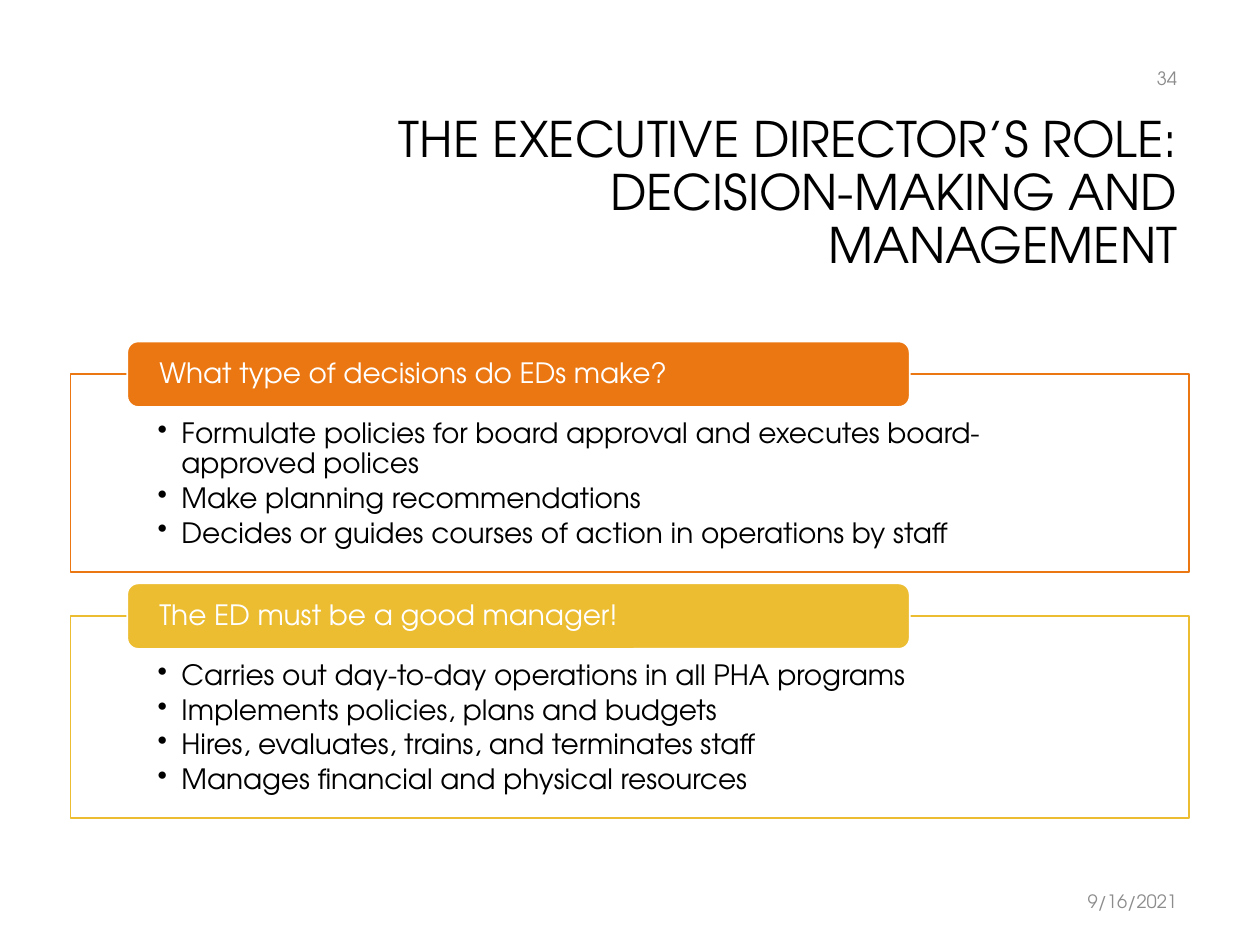
from lxml import etree
from pptx import Presentation
from pptx.dml.color import RGBColor
from pptx.enum import shapes, text
from pptx.oxml.ns import qn
from pptx.util import Inches, Pt

FONT = "TeX Gyre Adventor"
WHITE, BLACK, GRAY = "FFFFFF", "000000", "8C8C8C"


def color(value):
    return RGBColor.from_string(value)


def add_run(paragraph, words, size, ink):
    run = paragraph.add_run()
    run.text = words
    run.font.name = FONT
    run.font.size = Pt(size)
    run.font.color.rgb = color(ink)


prs = Presentation()
prs.slide_width, prs.slide_height = Inches(10), Inches(7.5)
slide = prs.slides.add_slide(prs.slide_layouts[6])

# Title, page number and date: right-aligned text
headings = [
    (["THE EXECUTIVE DIRECTOR’S ROLE:", "DECISION-MAKING AND MANAGEMENT"],
     2.38, 0.84, 7.06, 1.41, 28, BLACK, 0.9),
    (["34"], 7.19, 0.42, 2.25, 0.4, 10.5, GRAY, 1.0),
    (["9/16/2021"], 7.05, 6.95, 2.39, 0.4, 10.5, GRAY, 1.0),
]
for lines, left, top, width, height, size, ink, spacing in headings:
    heading = slide.shapes.add_textbox(
        Inches(left), Inches(top), Inches(width), Inches(height)).text_frame
    heading.word_wrap = True
    heading.vertical_anchor = text.MSO_ANCHOR.MIDDLE
    paragraph = heading.paragraphs[0]
    paragraph.alignment = text.PP_ALIGN.RIGHT
    paragraph.line_spacing = spacing
    for i, line in enumerate(lines):
        if i:
            paragraph.add_line_break()
        add_run(paragraph, line, size, ink)

# Two topics: an outlined panel of bullets under a filled label
topics = [
    ("What type of decisions do EDs make?", "EB7712", 2.97, 1.57, [
        "Formulate policies for board approval and executes board-approved polices",
        "Make planning recommendations",
        "Decides or guides courses of action in operations by staff",
    ]),
    ("The ED must be a good manager!", "ECBD31", 4.89, 1.6, [
        "Carries out day-to-day operations in all PHA programs",
        "Implements policies, plans and budgets",
        "Hires, evaluates, trains, and terminates staff",
        "Manages financial and physical resources",
    ]),
]
for question, accent, top, height, points in topics:
    panel = slide.shapes.add_shape(
        shapes.MSO_SHAPE.RECTANGLE,
        Inches(0.56), Inches(top), Inches(8.88), Inches(height))
    label = slide.shapes.add_shape(
        shapes.MSO_SHAPE.ROUNDED_RECTANGLE,
        Inches(1.01), Inches(top - 0.26), Inches(6.21), Inches(0.52))
    for part, fill, line, side, above, below, anchor in (
            (panel, WHITE, accent, 0.69, 0.36, 0.12, text.MSO_ANCHOR.TOP),
            (label, accent, WHITE, 0.23, 0, 0, text.MSO_ANCHOR.MIDDLE)):
        part.shadow.inherit = False
        part.fill.solid()
        part.fill.fore_color.rgb = color(fill)
        part.line.color.rgb = color(line)
        part.line.width = Pt(1)
        frame = part.text_frame
        frame.word_wrap = True
        frame.vertical_anchor = anchor
        frame.margin_left = frame.margin_right = Inches(side)
        frame.margin_top, frame.margin_bottom = Inches(above), Inches(below)

    # Label text
    paragraph = label.text_frame.paragraphs[0]
    paragraph.alignment = text.PP_ALIGN.LEFT
    paragraph.line_spacing = 0.9
    add_run(paragraph, question, 16, WHITE)

    # Bullets with a hanging indent
    for i, point in enumerate(points):
        frame = panel.text_frame
        paragraph = frame.add_paragraph() if i else frame.paragraphs[0]
        paragraph.level = 1
        paragraph.alignment = text.PP_ALIGN.LEFT
        paragraph.line_spacing = 0.9
        paragraph.space_after = Pt(2.5)
        props = paragraph._p.get_or_add_pPr()
        props.set("marL", str(Inches(0.19)))
        props.set("indent", str(-Inches(0.19)))
        etree.SubElement(props, qn("a:buChar")).set("char", "•")
        add_run(paragraph, point, 16, BLACK)

prs.save("out.pptx")
